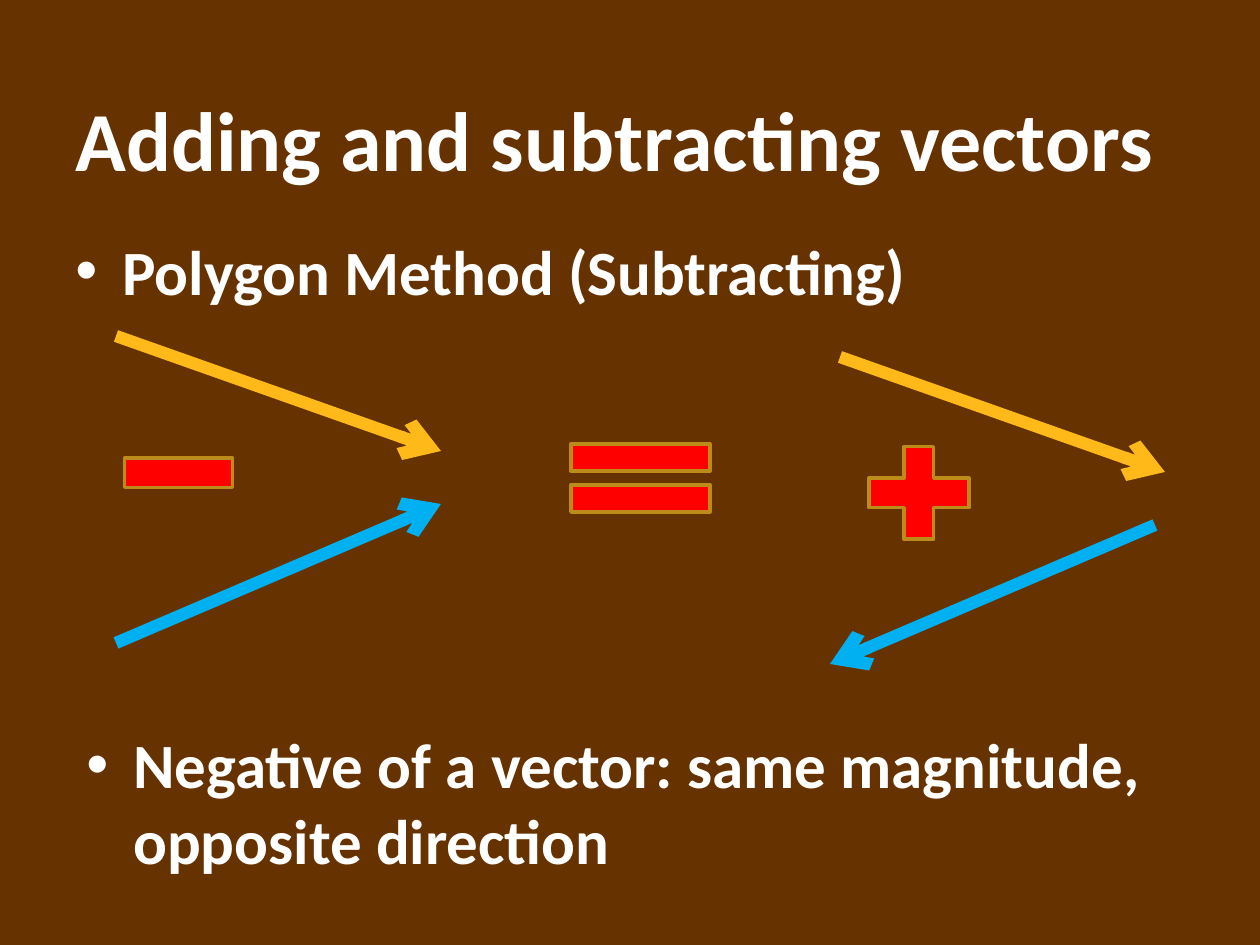
import lxml.etree
import pptx
import pptx.dml.color
import pptx.enum.shapes
import pptx.enum.text
import pptx.oxml.ns
import pptx.util

EMU_PER_PX = 914400 // 126
COLORS = {
    "background": "663300",
    "text": "FFFFFF",
    "first_vector": "FFBA19",
    "second_vector": "00B0F0",
    "operator": "FF0000",
    "operator_line": "BD8B17",
}
SHAPES = pptx.enum.shapes.MSO_SHAPE


def px(*lengths):
    return [pptx.util.Emu(length * EMU_PER_PX) for length in lengths]


def color(name):
    return pptx.dml.color.RGBColor.from_string(COLORS[name])


def add_element(parent, tag, **attributes):
    return lxml.etree.SubElement(parent, pptx.oxml.ns.qn(tag), **attributes)


def add_text(slide, box, text, size, anchor, inset_top=6):
    shape = slide.shapes.add_textbox(*px(*box))
    frame = shape.text_frame
    frame.word_wrap = True
    frame.vertical_anchor = anchor
    frame.margin_top = px(inset_top)[0]
    frame.text = text
    font = frame.paragraphs[0].runs[0].font
    font.name = "Calibri"
    font.size = pptx.util.Pt(size)
    font.bold = True
    font.color.rgb = color("text")
    return frame.paragraphs[0]


def add_bullet_text(slide, box, text):
    paragraph = add_text(slide, box, text, 36, pptx.enum.text.MSO_ANCHOR.TOP, inset_top=12)
    properties = paragraph._p.get_or_add_pPr()
    indent = px(47)[0]
    properties.set("marL", str(indent))
    properties.set("indent", str(-indent))
    bullet_color = add_element(properties, "a:buClr")
    add_element(bullet_color, "a:srgbClr", val=COLORS["text"])
    add_element(properties, "a:buFont", typeface="Arial")
    add_element(properties, "a:buChar", char="•")


def add_vector(slide, start, end, color_name):
    connector = slide.shapes.add_connector(
        pptx.enum.shapes.MSO_CONNECTOR.STRAIGHT, *px(*start, *end)
    )
    connector.line.color.rgb = color(color_name)
    connector.line.width = pptx.util.Pt(7)
    add_element(connector.line._get_or_add_ln(), "a:tailEnd", type="arrow")
    add_element(connector._element.spPr, "a:effectLst")


def add_operator(slide, preset, box):
    shape = slide.shapes.add_shape(preset, *px(*box))
    shape.shadow.inherit = False
    shape.fill.solid()
    shape.fill.fore_color.rgb = color("operator")
    shape.line.color.rgb = color("operator_line")
    shape.line.width = pptx.util.Pt(2)


def main():
    presentation = pptx.Presentation()
    presentation.slide_width, presentation.slide_height = px(1260, 945)
    slide = presentation.slides.add_slide(presentation.slide_layouts[6])
    slide.background.fill.solid()
    slide.background.fill.fore_color.rgb = color("background")

    add_text(slide, (63, 38, 1134, 157), "Adding and subtracting vectors", 48,
             pptx.enum.text.MSO_ANCHOR.BOTTOM)
    add_bullet_text(slide, (63, 220, 903, 95), "Polygon Method (Subtracting)")

    add_vector(slide, (116, 643), (441, 504), "second_vector")
    add_vector(slide, (116, 336), (441, 451), "first_vector")
    add_operator(slide, SHAPES.MATH_MINUS, (105, 410, 147, 126))
    add_vector(slide, (840, 357), (1165, 472), "first_vector")
    add_operator(slide, SHAPES.MATH_EQUAL, (546, 420, 189, 116))
    add_vector(slide, (1155, 525), (830, 664), "second_vector")
    add_operator(slide, SHAPES.MATH_PLUS, (851, 430, 136, 126))

    add_bullet_text(slide, (74, 714, 1113, 179),
                    "Negative of a vector: same magnitude, opposite direction")
    presentation.save("out.pptx")


if __name__ == "__main__":
    main()
